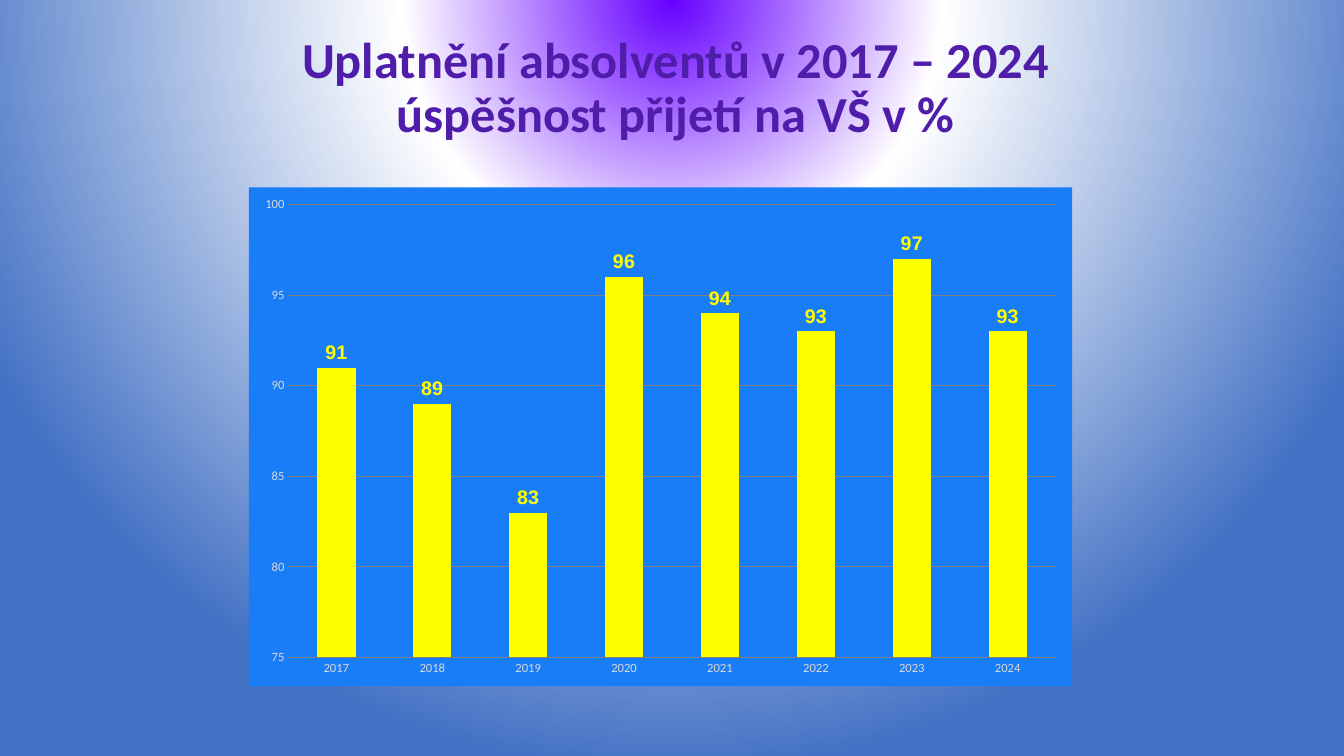
import pptx
import pptx.chart.data
import pptx.dml.color
import pptx.enum.chart
import pptx.enum.text
import pptx.oxml
import pptx.oxml.ns
import pptx.util
from pptx.util import Cm, Pt


def color(value):
    return pptx.dml.color.RGBColor.from_string(value)


def set_font(font, name, size, value, bold=False):
    font.name = name
    font.size = Pt(size)
    font.color.rgb = color(value)
    font.bold = bold


prs = pptx.Presentation()
prs.slide_width, prs.slide_height = Cm(33.87), Cm(19.05)
s = prs.slides.add_slide(prs.slide_layouts[5])

# Circular gradient background, centred above the slide
stops = "".join(
    f'<a:gs pos="{pos * 1000}"><a:srgbClr val="{value}"/></a:gs>'
    for pos, value in [(0, "6600FF"), (35, "FFFFFF"), (100, "4472C4")]
)
bg = pptx.oxml.parse_xml(
    f'<p:bg {pptx.oxml.ns.nsdecls("p", "a")}><p:bgPr><a:gradFill rotWithShape="1">'
    f'<a:gsLst>{stops}</a:gsLst><a:path path="circle">'
    '<a:fillToRect l="50000" t="-80000" r="50000" b="180000"/></a:path>'
    '</a:gradFill><a:effectLst/></p:bgPr></p:bg>'
)
s.element.find(pptx.oxml.ns.qn("p:cSld")).insert(0, bg)

# Title
title = s.shapes.title
title.left, title.top, title.width, title.height = Cm(2.31), Cm(0.41), Cm(29.44), Cm(3.68)
tf = title.text_frame
tf.text = "Uplatnění absolventů v 2017 – 2024\vúspěšnost přijetí na VŠ v %"
tf.word_wrap = True
tf.auto_size = pptx.enum.text.MSO_AUTO_SIZE.NONE
tf.vertical_anchor = pptx.enum.text.MSO_ANCHOR.MIDDLE
p = tf.paragraphs[0]
p.alignment = pptx.enum.text.PP_ALIGN.CENTER
p.line_spacing = 0.9
for r in p.runs:
    set_font(r.font, "Calibri", 36, "501DAB", True)

# Column chart of admission rates
data = pptx.chart.data.CategoryChartData()
data.categories = [str(year) for year in range(2017, 2025)]
data.add_series("Series 1", [91, 89, 83, 96, 94, 93, 97, 93])
chart = s.shapes.add_chart(
    pptx.enum.chart.XL_CHART_TYPE.COLUMN_CLUSTERED,
    Cm(6.27), Cm(4.72), Cm(20.75), Cm(12.57), data,
).chart
chart.has_title = False
chart.has_legend = False
set_font(chart.font, "Calibri", 10, "000000")

# Chart area fill
area = pptx.oxml.parse_xml(
    f'<c:spPr {pptx.oxml.ns.nsdecls("c", "a")}><a:solidFill><a:srgbClr val="197DF7"/>'
    '</a:solidFill><a:ln><a:noFill/></a:ln></c:spPr>'
)
chart.element.find(pptx.oxml.ns.qn("c:chart")).addnext(area)

# Axes and gridlines
for axis in (chart.category_axis, chart.value_axis):
    axis.major_tick_mark = pptx.enum.chart.XL_TICK_MARK.NONE
    axis.minor_tick_mark = pptx.enum.chart.XL_TICK_MARK.NONE
    axis.format.line.fill.background()
    set_font(axis.tick_labels.font, "Calibri", 9, "D9D9D9")
axis = chart.value_axis
axis.minimum_scale, axis.maximum_scale, axis.major_unit = 75, 100, 5
axis.has_major_gridlines = True
grid = axis.major_gridlines.format.line
grid.color.rgb = color("808080")
grid.width = Pt(0.75)

# Columns and value labels
plot = chart.plots[0]
plot.gap_width = 150
plot.vary_by_categories = False
series = plot.series[0]
series.format.fill.solid()
series.format.fill.fore_color.rgb = color("FFFF00")
labels = series.data_labels
labels.show_value = True
labels.position = pptx.enum.chart.XL_LABEL_POSITION.OUTSIDE_END
set_font(labels.font, "Arial", 14, "FFFF00", True)

prs.save("out.pptx")
